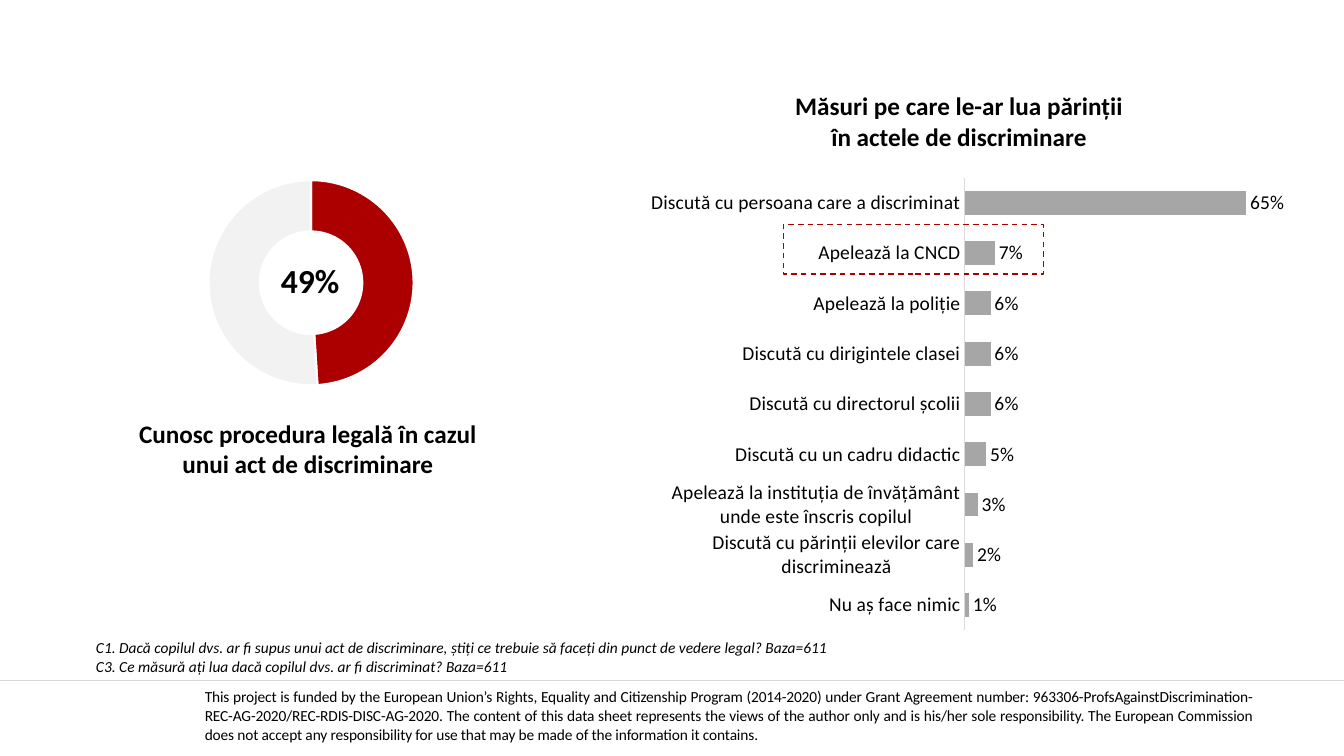
from lxml.etree import SubElement
from pptx import Presentation
from pptx.chart.data import CategoryChartData
from pptx.dml.color import RGBColor
from pptx.enum.chart import XL_CHART_TYPE, XL_LABEL_POSITION, XL_TICK_LABEL_POSITION, XL_TICK_MARK
from pptx.enum.dml import MSO_LINE
from pptx.enum.shapes import MSO_CONNECTOR, MSO_SHAPE
from pptx.enum.text import MSO_ANCHOR, PP_ALIGN
from pptx.oxml.ns import qn
from pptx.util import Cm, Pt


def colour(hex_string):
    return RGBColor.from_string(hex_string)


def style_font(font, values):
    for name, value in {"name": "Calibri", **values}.items():
        setattr(font, name, value)
    font.color.rgb = colour("000000")


presentation = Presentation()
presentation.slide_width = Cm(33.87)
presentation.slide_height = Cm(19.05)
slide = presentation.slides.add_slide(presentation.slide_layouts[6])

table_frame = slide.shapes.add_table(1, 1, Cm(5.16), Cm(16.73), Cm(26.42), Cm(2.64))
table = table_frame.table
table.first_row = False
table.horz_banding = False
cell = table.cell(0, 0)
cell.fill.background()
cell.text = (
    "This project is funded by the European Union’s Rights, Equality and Citizenship Program "
    "(2014-2020) under Grant Agreement number: 963306-ProfsAgainstDiscrimination-REC-AG-2020/"
    "REC-RDIS-DISC-AG-2020. The content of this data sheet represents the views of the author "
    "only and is his/her sole responsibility. The European Commission does not accept any "
    "responsibility for use that may be made of the information it contains."
)
cell_format = {
    "vertical_anchor": MSO_ANCHOR.MIDDLE,
    "margin_left": 0,
    "margin_right": 0,
    "margin_top": 0,
    "margin_bottom": 0,
}
for name, value in cell_format.items():
    setattr(cell, name, value)
paragraph = cell.text_frame.paragraphs[0]
paragraph.alignment = PP_ALIGN.JUSTIFY
style_font(paragraph.runs[0].font, {"size": Pt(11), "bold": False})
table_frame.element.xpath(".//a:rPr")[0].set("spc", "-10")

awareness_data = CategoryChartData()
awareness_data.categories = ["1", "2"]
awareness_data.add_series("Series 1", [49, 51])

measures = [
    ("Discută cu persoana care a discriminat", 0.65),
    ("Apelează la CNCD", 0.07),
    ("Apelează la poliție", 0.06),
    ("Discută cu dirigintele clasei", 0.06),
    ("Discută cu directorul școlii", 0.06),
    ("Discută cu un cadru didactic", 0.05),
    ("Apelează la instituția de învățământ unde este înscris copilul", 0.03),
    ("Discută cu părinții elevilor care discriminează", 0.02),
    ("Nu aș face nimic", 0.01),
]
measures_data = CategoryChartData(number_format="###0%")
measures_data.categories = [label for label, share in measures]
measures_data.add_series("Series 1", [share for label, share in measures])

charts = []
for chart_type, left, top, width, height, data in [
    (XL_CHART_TYPE.DOUGHNUT, 3.23, 4.19, 9.22, 5.87, awareness_data),
    (XL_CHART_TYPE.BAR_CLUSTERED, 16.41, 3.98, 17.07, 12.4, measures_data),
]:
    frame = slide.shapes.add_chart(chart_type, Cm(left), Cm(top), Cm(width), Cm(height), data)
    chart = frame.chart
    chart.has_legend = False
    chart.has_title = False
    style_font(chart.font, {"size": Pt(10)})
    charts.append(chart)
doughnut, bars = charts

doughnut.plots[0].vary_by_categories = False
doughnut.element.xpath("//c:holeSize")[0].set("val", "56")
for index, fill in enumerate(["AC0000", "F2F2F2"]):
    point = doughnut.plots[0].series[0].points[index]
    point.format.fill.solid()
    point.format.fill.fore_color.rgb = colour(fill)
    point.format.line.color.rgb = colour("FFFFFF")
    point.format.line.width = Pt(1.5)

plot = bars.plots[0]
plot.vary_by_categories = False
plot.gap_width = 111
series_fill = plot.series[0].format.fill
series_fill.solid()
series_fill.fore_color.rgb = colour("A6A6A6")
plot.has_data_labels = True
label_format = {
    "show_value": True,
    "number_format": "###0%",
    "number_format_is_linked": False,
    "position": XL_LABEL_POSITION.OUTSIDE_END,
}
for name, value in label_format.items():
    setattr(plot.data_labels, name, value)
style_font(plot.data_labels.font, {"size": Pt(14)})

category_format = {
    "reverse_order": True,
    "major_tick_mark": XL_TICK_MARK.NONE,
    "tick_label_position": XL_TICK_LABEL_POSITION.NEXT_TO_AXIS,
    "has_major_gridlines": False,
}
for name, value in category_format.items():
    setattr(bars.category_axis, name, value)
style_font(bars.category_axis.tick_labels.font, {"size": Pt(14)})
bars.category_axis.format.line.color.rgb = colour("D9D9D9")
bars.category_axis.format.line.width = Pt(0.75)
value_format = {
    "minimum_scale": 0,
    "maximum_scale": 0.7,
    "major_tick_mark": XL_TICK_MARK.NONE,
    "has_major_gridlines": False,
    "visible": False,
}
for name, value in value_format.items():
    setattr(bars.value_axis, name, value)

plot_area = bars.element.xpath("//c:plotArea")[0]
for layout in plot_area.findall(qn("c:layout")):
    plot_area.remove(layout)
layout = SubElement(plot_area, qn("c:layout"))
plot_area.insert(0, layout)
manual_layout = SubElement(layout, qn("c:manualLayout"))
for name, value in {
    "layoutTarget": "inner",
    "xMode": "edge",
    "yMode": "edge",
    "x": "0.46",
    "y": "0.04",
    "w": "0.45",
    "h": "0.92",
}.items():
    SubElement(manual_layout, qn(f"c:{name}")).set("val", value)

heading = {"size": Pt(18), "bold": True}
for lines, left, top, width, height, wrap, anchor, alignment, font_format in [
    (["49%"], 6.81, 6.42, 2.01, 1.27, False, MSO_ANCHOR.MIDDLE, PP_ALIGN.CENTER,
     {"size": Pt(24), "bold": True}),
    (["Cunosc procedura legală în cazul", "unui act de discriminare"],
     3.15, 10.41, 9.22, 1.8, False, MSO_ANCHOR.MIDDLE, PP_ALIGN.CENTER, heading),
    (["Măsuri pe care le-ar lua părinții", "în actele de discriminare"],
     19.75, 2.16, 8.84, 1.8, False, MSO_ANCHOR.TOP, PP_ALIGN.CENTER, heading),
    (["C1. Dacă copilul dvs. ar fi supus unui act de discriminare, știți ce trebuie să faceți "
      "din punct de vedere legal? Baza=611",
      "C3. Ce măsură ați lua dacă copilul dvs. ar fi discriminat? Baza=611"],
     2.17, 15.96, 31.57, 1.19, True, MSO_ANCHOR.TOP, PP_ALIGN.LEFT,
     {"size": Pt(11), "italic": True}),
]:
    text_box = slide.shapes.add_textbox(Cm(left), Cm(top), Cm(width), Cm(height))
    text_frame = text_box.text_frame
    text_frame.text = "\n".join(lines)
    text_frame.word_wrap = wrap
    text_frame.vertical_anchor = anchor
    for paragraph in text_frame.paragraphs:
        paragraph.alignment = alignment
        style_font(paragraph.runs[0].font, font_format)

highlight = slide.shapes.add_shape(MSO_SHAPE.RECTANGLE, Cm(19.74), Cm(5.66), Cm(6.56), Cm(1.25))
highlight.shadow.inherit = False
highlight.fill.background()
highlight.line.color.rgb = colour("AC0000")
highlight.line.width = Pt(1)
highlight.line.dash_style = MSO_LINE.DASH

divider = slide.shapes.add_connector(
    MSO_CONNECTOR.STRAIGHT, 0, Cm(17.15), presentation.slide_width, Cm(17.15)
)
divider.line.color.rgb = colour("D9D9D9")
divider.line.width = Pt(0.5)
SubElement(divider.element.spPr, qn("a:effectLst"))

presentation.save("out.pptx")
